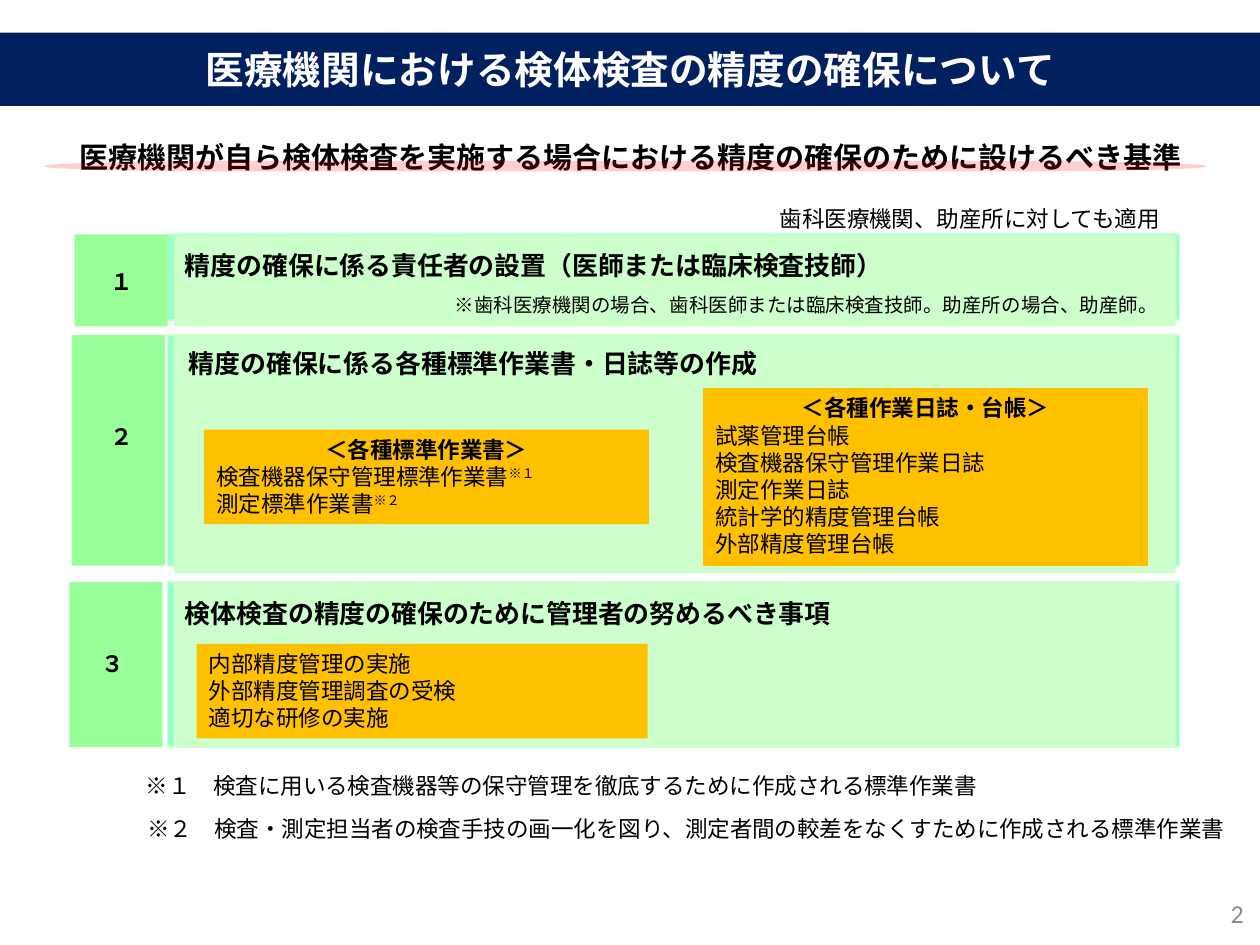
from lxml import etree
from pptx import Presentation
from pptx.dml.color import RGBColor
from pptx.enum.shapes import MSO_SHAPE
from pptx.enum.text import MSO_ANCHOR, PP_ALIGN
from pptx.oxml.ns import qn
from pptx.util import Pt

RECT, TERMINATOR = MSO_SHAPE.RECTANGLE, MSO_SHAPE.FLOWCHART_TERMINATOR
LEFT, CENTER, RIGHT = PP_ALIGN.LEFT, PP_ALIGN.CENTER, PP_ALIGN.RIGHT
TOP, MIDDLE = MSO_ANCHOR.TOP, MSO_ANCHOR.MIDDLE
FONT = "Noto Sans CJK JP"
COLORS = {
    "navy": "002060", "white": "FFFFFF", "black": "000000", "gray": "8C8C8C",
    "red": "FF0000", "mint": "99FFCC", "pale": "CCFFCC", "green": "99FF99",
    "gold": "FFC000",
}
BODY, HEADING = 12.9, 14.8


def color(name):
    return RGBColor.from_string(COLORS[name])


def write(box, lines, size=BODY, bold=False, ink="black", align=LEFT,
          anchor=TOP, wrap=True, font=FONT, title_line=False):
    """Write lines; each is a string or a (text, superscript) pair.

    With title_line, the first line is bold and centred.
    """
    frame = box.text_frame
    frame.word_wrap = wrap
    frame.vertical_anchor = anchor
    for index, line in enumerate(lines):
        para = frame.paragraphs[0] if index == 0 else frame.add_paragraph()
        is_title = title_line and index == 0
        para.alignment = CENTER if is_title else align
        para.line_spacing = Pt(round(size * 1.2, 1))
        parts = (line,) if isinstance(line, str) else line
        for part_index, part in enumerate(parts):
            span = para.add_run()
            span.text = part
            span.font.size = Pt(size)
            span.font.bold = bold or is_title
            span.font.name = font
            span.font.color.rgb = color(ink)
            properties = span.font._element
            etree.SubElement(properties, qn("a:ea"), typeface=font)
            if part_index:
                properties.set("baseline", "30000")


def add_text(page, box, lines, **style):
    write(page.shapes.add_textbox(*map(Pt, box)), lines, **style)


def add_block(page, box, fill, line=None, kind=RECT):
    block = page.shapes.add_shape(kind, *map(Pt, box))
    block.shadow.inherit = False
    block.fill.solid()
    block.fill.fore_color.rgb = color(fill)
    if line:
        block.line.color.rgb = color(line)
        block.line.width = Pt(1)
    else:
        block.line.fill.background()
    return block


def add_title(page, box, text):
    title = page.shapes.title
    title.left, title.top, title.width, title.height = map(Pt, box)
    title.fill.solid()
    title.fill.fore_color.rgb = color("navy")
    write(title, [text], size=22.1, bold=True, ink="white", align=CENTER,
          anchor=MIDDLE)


def add_subtitle(page, box, text):
    left, top, width, height = box
    add_text(page, box, [text], size=16.6, bold=True, align=CENTER, wrap=False)
    underline = add_block(page, (left, top + 15.8, width - 5, 5.8), "red",
                          kind=TERMINATOR)
    fill_color = underline.fill._xPr.find(qn("a:solidFill"))[0]
    etree.SubElement(fill_color, qn("a:alpha"), val="19000")


def add_section(page, box, number, heading, tab, panel_height, number_at,
                heading_at):
    """Draw a panel with its number tab; tab is (left, height)."""
    left, top, width, height = box
    add_block(page, box, "mint", line="pale")
    add_block(page, (left + 3.6, top + 0.7, width - 5.8, panel_height), "pale")
    add_block(page, (tab[0], top, 53.3, tab[1]), "green")
    add_text(page, (*number_at, 27.4, 23), [number], bold=True, wrap=False)
    add_text(page, (*heading_at, 486, 25.2), [heading], size=HEADING, bold=True)


def add_list(page, box, lines, title_line=False):
    write(add_block(page, box, "gold"), lines, title_line=title_line)


def main():
    deck = Presentation()
    deck.slide_width, deck.slide_height = Pt(720), Pt(540)
    page = deck.slides.add_slide(deck.slide_layouts[5])

    # Title and subtitle
    add_title(page, (0, 18.7, 720, 41.8),
              "医療機関における検体検査の精度の確保について")
    add_subtitle(page, (25.2, 76.3, 669.6, 27.4),
                 "医療機関が自ら検体検査を実施する場合における精度の確保のために設けるべき基準")

    # Numbered sections: top, height, number, heading, tab, panel height, places
    sections = [
        (133.9, 49, "１", "精度の確保に係る責任者の設置（医師または臨床検査技師）",
         (42.5, 52.6), 51.8, (56.2, 149.8), (98.6, 139)),
        (191.5, 131.8, "２", "精度の確保に係る各種標準作業書・日誌等の作成",
         (41, 131.8), 135.4, (56.2, 238.3), (100.8, 195.1)),
        (332.6, 94.3, "３", "検体検査の精度の確保のために管理者の努めるべき事項",
         (39.6, 94.3), 93.6, (51.1, 367.9), (98.6, 337.7)),
    ]
    for top, height, *details in sections:
        add_section(page, (95.8, top, 578.2, height), *details)

    # Lists inside the sections
    add_list(page, (116.6, 245.5, 254.2, 54),
             ["＜各種標準作業書＞", ("検査機器保守管理標準作業書", "※１"),
              ("測定標準作業書", "※２")], title_line=True)
    add_list(page, (401.8, 221.8, 254.2, 101.5),
             ["＜各種作業日誌・台帳＞", "試薬管理台帳", "検査機器保守管理作業日誌",
              "測定作業日誌", "統計学的精度管理台帳", "外部精度管理台帳"],
             title_line=True)
    add_list(page, (112.3, 367.9, 257.8, 54),
             ["内部精度管理の実施", "外部精度管理調査の受検", "適切な研修の実施"])

    # Remarks and footnotes
    add_text(page, (438.5, 113.8, 235.4, 23),
             ["歯科医療機関、助産所に対しても適用"], wrap=False)
    add_text(page, (252.7, 164.2, 419, 20.9),
             ["※歯科医療機関の場合、歯科医師または臨床検査技師。助産所の場合、助産師。"],
             size=11.1, wrap=False)
    add_text(page, (76.3, 437.8, 623.5, 23),
             ["※１　検査に用いる検査機器等の保守管理を徹底するために作成される標準作業書"])
    add_text(page, (77, 462.2, 643.7, 23),
             ["※２　検査・測定担当者の検査手技の画一化を図り、測定者間の較差をなくすために作成される標準作業書"])

    # Page number
    add_text(page, (555.8, 508.3, 162, 26.6), ["2"], size=HEADING, ink="gray",
             align=RIGHT, anchor=MIDDLE, font="Calibri")

    deck.save("out.pptx")


if __name__ == "__main__":
    main()
